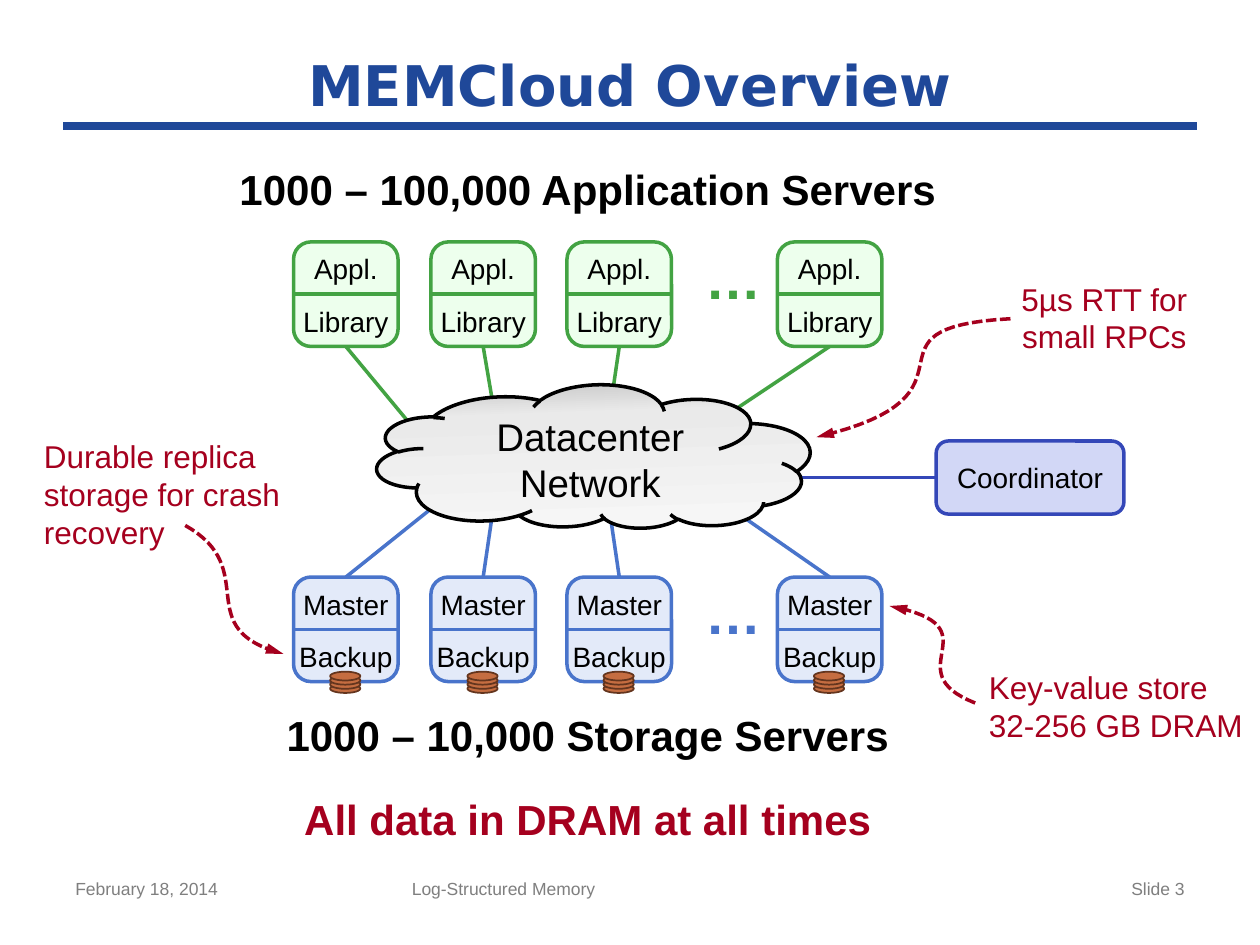
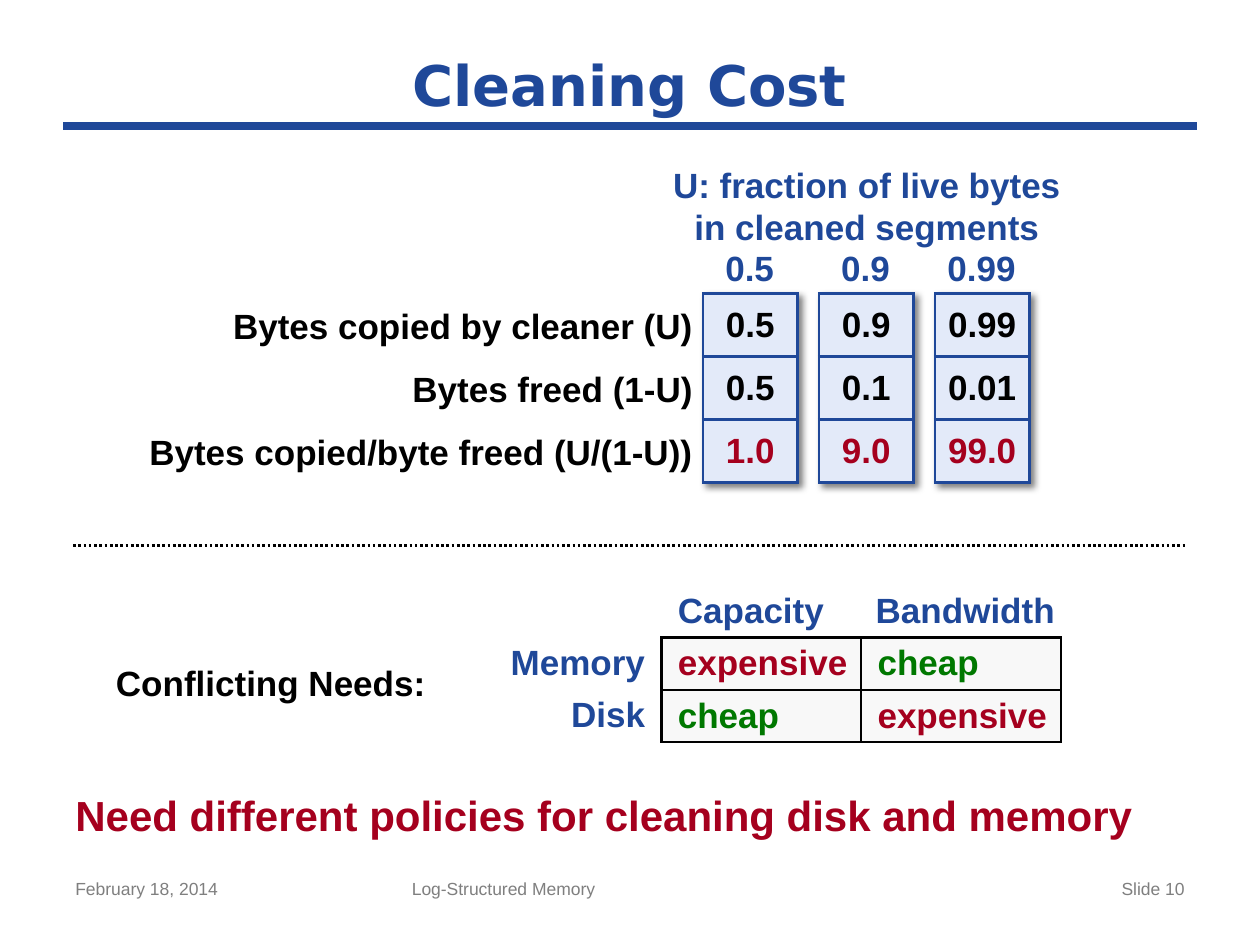
import pptx
import pptx.dml.color
import pptx.enum.dml
import pptx.enum.shapes
import pptx.enum.text
import pptx.oxml
import pptx.oxml.ns
import pptx.util
from lxml import etree

Inches = pptx.util.Inches
Pt = pptx.util.Pt
RGBColor = pptx.dml.color.RGBColor
ALIGN = pptx.enum.text.PP_ALIGN
ANCHOR = pptx.enum.text.MSO_ANCHOR
SHAPE = pptx.enum.shapes.MSO_SHAPE
DASH = pptx.enum.dml.MSO_LINE
qn = pptx.oxml.ns.qn

BLACK = RGBColor(0x00, 0x00, 0x00)
GRAY = RGBColor(0x7F, 0x7F, 0x7F)
NAVY = RGBColor(0x1F, 0x48, 0x99)
RED = RGBColor(0xA5, 0x00, 0x1E)
GREEN = RGBColor(0x00, 0x78, 0x00)
APP_LINE = RGBColor(0x43, 0xA3, 0x43)
APP_FILL = RGBColor(0xED, 0xFF, 0xED)
STORE_LINE = RGBColor(0x49, 0x74, 0xCB)
STORE_FILL = RGBColor(0xE3, 0xEA, 0xF9)
COORD_LINE = RGBColor(0x34, 0x47, 0xB8)
COORD_FILL = RGBColor(0xD2, 0xD7, 0xF6)
DISK_LINE = RGBColor(0x64, 0x35, 0x1E)
DISK_FILL = RGBColor(0xC5, 0x6D, 0x41)
NEEDS_FILL = RGBColor(0xF8, 0xF8, 0xF8)

BODY_FONT = "Arial"
TITLE_FONT = "DejaVu Sans"
SERVER_SIZE = 0.83
SERVER_LEFTS = (2.33, 3.42, 4.5, 6.17)
TOP, LEFT, BOTTOM = 0, 1, 2

A_NS = "http://schemas.openxmlformats.org/drawingml/2006/main"
CLOUD_GRADIENT = f"""<a:gradFill xmlns:a="{A_NS}" rotWithShape="1"><a:gsLst>
<a:gs pos="0"><a:srgbClr val="F8F8F8"/></a:gs>
<a:gs pos="76000"><a:srgbClr val="EAEAEA"/></a:gs>
<a:gs pos="100000"><a:srgbClr val="C0C0C0"/></a:gs>
</a:gsLst><a:lin ang="5400000" scaled="0"/></a:gradFill>"""
TABLE_SHADOW = f"""<a:effectLst xmlns:a="{A_NS}">
<a:outerShdw blurRad="50800" dist="38100" dir="2700000" algn="tl" rotWithShape="0">
<a:srgbClr val="000000"><a:alpha val="50000"/></a:srgbClr></a:outerShdw></a:effectLst>"""


def inches(*values):
    return [Inches(v) for v in values]


def write(tf, text, size, color=BLACK, bold=False, align=ALIGN.LEFT, font=BODY_FONT):
    """Fill a text frame with one paragraph; a newline is a line break."""
    p = tf.paragraphs[0]
    p.text = text
    p.alignment = align
    p.font.name = font
    p.font.size = Pt(size)
    p.font.bold = bold
    p.font.color.rgb = color


def add_text(slide, text, at, size, color=BLACK, bold=False, align=ALIGN.LEFT,
             inset=True, wrap=True):
    tf = slide.shapes.add_textbox(*inches(*at)).text_frame
    tf.word_wrap = wrap
    if not inset:
        tf.margin_left = tf.margin_top = tf.margin_right = tf.margin_bottom = 0
    write(tf, text, size, color, bold, align)


def add_label(slide, text, at, color=BLACK, align=ALIGN.LEFT):
    """Bold 20 pt label without insets."""
    add_text(slide, text, at, 20, color, True, align, inset=False)


def add_box(slide, kind, at, fill, line, width=2):
    sp = slide.shapes.add_shape(kind, *inches(*at))
    sp.shadow.inherit = False
    sp.fill.solid()
    sp.fill.fore_color.rgb = fill
    sp.line.color.rgb = line
    sp.line.width = Pt(width)
    return sp


def add_line(slide, start, end, color, width=2, dash=None):
    line = slide.shapes.add_connector(
        pptx.enum.shapes.MSO_CONNECTOR.STRAIGHT, *inches(*start, *end))
    line.line.color.rgb = color
    line.line.width = Pt(width)
    if dash:
        line.line.dash_style = dash
    etree.SubElement(line._element.spPr, qn("a:effectLst"))
    return line


def add_curved_arrow(slide, start, control1, control2, end, steps=32):
    """Dashed cubic curve with an arrowhead at its end."""
    points = []
    for i in range(steps + 1):
        t = i / steps
        weights = ((1 - t) ** 3, 3 * t * (1 - t) ** 2, 3 * t * t * (1 - t), t ** 3)
        points.append(inches(*(
            sum(w * c for w, c in zip(weights, axis))
            for axis in zip(start, control1, control2, end))))
    builder = slide.shapes.build_freeform(*points[0])
    builder.add_line_segments(points[1:], close=False)
    sp = builder.convert_to_shape()
    sp.shadow.inherit = False
    sp.fill.background()
    sp.line.color.rgb = RED
    sp.line.width = Pt(2)
    sp.line.dash_style = DASH.SQUARE_DOT
    ln = sp._element.spPr.find(qn("a:ln"))
    etree.SubElement(ln, qn("a:tailEnd"), type="triangle", w="med", len="lg")


def add_server(slide, left, top, labels, fill, line):
    sp = add_box(slide, SHAPE.ROUNDED_RECTANGLE,
                 (left, top, SERVER_SIZE, SERVER_SIZE), fill, line)
    middle = top + SERVER_SIZE / 2
    add_line(slide, (left, middle), (left + SERVER_SIZE, middle), line)
    for label, y in zip(labels, (top + 0.08, top + 0.5)):
        add_text(slide, label, (left, y, SERVER_SIZE, 0.27), 16,
                 align=ALIGN.CENTER, inset=False)
    return sp


def add_server_row(slide, top, labels, fill, line, side, link_ends):
    """Servers, the dots for the rest, and links from one side to the network."""
    for left, end in zip(SERVER_LEFTS, link_ends):
        server = add_server(slide, left, top, labels, fill, line)
        link = add_line(slide, (left, top), end, line)
        link.begin_connect(server, side)
    add_text(slide, "…", (5.5, top - 0.04, 0.53, 0.64), 32, line, True, ALIGN.CENTER)


def add_disk(slide, left, top):
    for i in range(4):
        add_box(slide, SHAPE.OVAL, (left, top - i * 0.033, 0.24, 0.07),
                DISK_FILL, DISK_LINE, 1)


def add_cloud(slide):
    sp = add_box(slide, SHAPE.CLOUD, (2.99, 3.06, 3.44, 1.15), NEEDS_FILL, BLACK)
    sp.rotation = 358
    spPr = sp._element.spPr
    spPr.find(qn("a:xfrm")).set("flipV", "1")
    spPr.replace(spPr.find(qn("a:solidFill")), pptx.oxml.parse_xml(CLOUD_GRADIENT))
    add_text(slide, "Datacenter\nNetwork", (3.68, 3.23, 2.01, 0.84), 22,
             align=ALIGN.CENTER)


def set_borders(cell, color, width=1.5):
    tcPr = cell._tc.get_or_add_tcPr()
    for side in ("lnL", "lnR", "lnT", "lnB"):
        ln = etree.SubElement(tcPr, qn(f"a:{side}"), w=str(Pt(width)))
        fill = etree.SubElement(ln, qn("a:solidFill"))
        etree.SubElement(fill, qn("a:srgbClr"), val=str(color))


def add_grid(slide, rows, at, fill, border, align, margin):
    """Table of (text, colour) cells with equal columns and rows."""
    left, top, width, height = at
    table = slide.shapes.add_table(len(rows), len(rows[0]), *inches(*at)).table
    table.first_row = table.horz_banding = False
    for column in table.columns:
        column.width = Inches(width / len(rows[0]))
    for row, values in zip(table.rows, rows):
        row.height = Inches(height / len(rows))
        for cell, (text, color) in zip(row.cells, values):
            set_borders(cell, border)
            cell.fill.solid()
            cell.fill.fore_color.rgb = fill
            cell.vertical_anchor = ANCHOR.MIDDLE
            cell.margin_left = Inches(margin)
            cell.margin_right = 0
            cell.margin_top = cell.margin_bottom = Inches(0.03)
            write(cell.text_frame, text, 20, color, True, align)
    return table


def add_slide(prs, title, number):
    """Slide with the shared title, rule and footers."""
    slide = prs.slides.add_slide(prs.slide_layouts[5])
    sp = slide.shapes.title
    sp.left, sp.top, sp.width, sp.height = inches(0.5, 0.33, 9, 0.67)
    sp.text_frame.vertical_anchor = ANCHOR.MIDDLE
    write(sp.text_frame, title, 32, NAVY, True, ALIGN.CENTER, TITLE_FONT)
    add_line(slide, (0.5, 1), (9.5, 1), NAVY, 4.5)
    for text, left, width, align in (
            ("February 18, 2014", 0.5, 2.33, ALIGN.LEFT),
            ("Log-Structured Memory", 3.17, 3.75, ALIGN.LEFT),
            (f"Slide {number}", 7.17, 2.33, ALIGN.RIGHT)):
        add_text(slide, text, (left, 6.92, width, 0.43), 10, GRAY, align=align)
    return slide


def build_overview(prs):
    slide = add_slide(prs, "MEMCloud Overview", 3)
    for text, at, color in (
            ("1000 – 100,000 Application Servers", (1.75, 1.25, 5.83, 0.5), BLACK),
            ("1000 – 10,000 Storage Servers", (2.08, 5.58, 5.17, 0.5), BLACK),
            ("All data in DRAM at all times", (2.08, 6.25, 5.17, 0.5), RED)):
        add_text(slide, text, at, 24, color, True, ALIGN.CENTER)

    add_server_row(slide, 1.92, ("Appl.", "Library"), APP_FILL, APP_LINE, BOTTOM,
                   ((3.45, 3.6), (3.92, 3.25), (4.83, 3.33), (5.58, 3.42)))
    add_server_row(slide, 4.58, ("Master", "Backup"), STORE_FILL, STORE_LINE, TOP,
                   ((3.78, 3.75), (3.92, 4), (4.83, 4), (5.75, 4)))
    for left in SERVER_LEFTS:
        add_disk(slide, left + 0.29, 5.43)

    coordinator = add_box(slide, SHAPE.ROUNDED_RECTANGLE, (7.43, 3.5, 1.49, 0.58),
                          COORD_FILL, COORD_LINE)
    coordinator.text_frame.vertical_anchor = ANCHOR.MIDDLE
    write(coordinator.text_frame, "Coordinator", 16, align=ALIGN.CENTER)
    link = add_line(slide, (7.43, 3.79), (6, 3.79), COORD_LINE)
    link.begin_connect(coordinator, LEFT)
    add_cloud(slide)

    for text, at, align, curve in (
            ("Key-value store\n32-256 GB DRAM", (7.75, 5.25, 2.24, 0.71), ALIGN.LEFT,
             ((7.74, 5.58), (7.08, 5.32), (7.93, 4.98), (7.06, 4.81))),
            ("5µs RTT for\nsmall RPCs", (8, 2.17, 1.53, 0.71), ALIGN.CENTER,
             ((8.02, 2.53), (6.71, 2.6), (7.93, 3.13), (6.48, 3.47))),
            ("Durable replica\nstorage for crash\nrecovery", (0.25, 3.42, 2.1, 1.01),
             ALIGN.LEFT, ((1.47, 4.17), (2.09, 4.52), (1.49, 4.99), (2.25, 5.19)))):
        add_text(slide, text, at, 18, RED, align=align, wrap=False)
        add_curved_arrow(slide, *curve)


def build_cleaning_cost(prs):
    slide = add_slide(prs, "Cleaning Cost", 10)
    add_text(slide, "U: fraction of live bytes\nin cleaned segments",
             (5.17, 1.25, 3.42, 0.77), 20, NAVY, True, ALIGN.CENTER)
    for i, text in enumerate(("Bytes copied by cleaner (U)", "Bytes freed (1-U)",
                              "Bytes copied/byte freed (U/(1-U))")):
        add_label(slide, text, (0.83, 2.42 + i * 0.5, 4.67, 0.33), align=ALIGN.RIGHT)
    for i, (live, freed, cost) in enumerate((
            ("0.5", "0.5", "1.0"), ("0.9", "0.1", "9.0"), ("0.99", "0.01", "99.0"))):
        left = 5.58 + i * 0.92
        add_label(slide, live, (left + 0.08, 1.96, 0.58, 0.33), NAVY, ALIGN.CENTER)
        table = add_grid(slide, [[(live, BLACK)], [(freed, BLACK)], [(cost, RED)]],
                         (left, 2.33, 0.75, 1.5), STORE_FILL, NAVY, ALIGN.CENTER, 0)
        table._tbl.tblPr.insert(0, pptx.oxml.parse_xml(TABLE_SHADOW))

    add_line(slide, (0.58, 4.33), (9.42, 4.33), BLACK, 1.5, DASH.ROUND_DOT)

    add_label(slide, "Conflicting Needs:", (0.92, 5.25, 3.08, 0.33))
    for text, left in (("Capacity", 5.38), ("Bandwidth", 6.95)):
        add_label(slide, text, (left, 4.67, 1.58, 0.33), NAVY)
    for text, top in (("Memory", 5.08), ("Disk", 5.5)):
        add_label(slide, text, (3.95, top, 1.17, 0.33), NAVY, ALIGN.RIGHT)
    expensive, cheap = ("expensive", RED), ("cheap", GREEN)
    add_grid(slide, [[expensive, cheap], [cheap, expensive]],
             (5.25, 5.06, 3.17, 0.83), NEEDS_FILL, BLACK, ALIGN.LEFT, 0.13)
    add_text(slide, "Need different policies for cleaning disk and memory",
             (0.5, 6.22, 9, 0.53), 24, RED, True)


def main():
    prs = pptx.Presentation()
    prs.slide_width, prs.slide_height = inches(10, 7.5)
    build_overview(prs)
    build_cleaning_cost(prs)
    prs.save("out.pptx")


if __name__ == "__main__":
    main()
